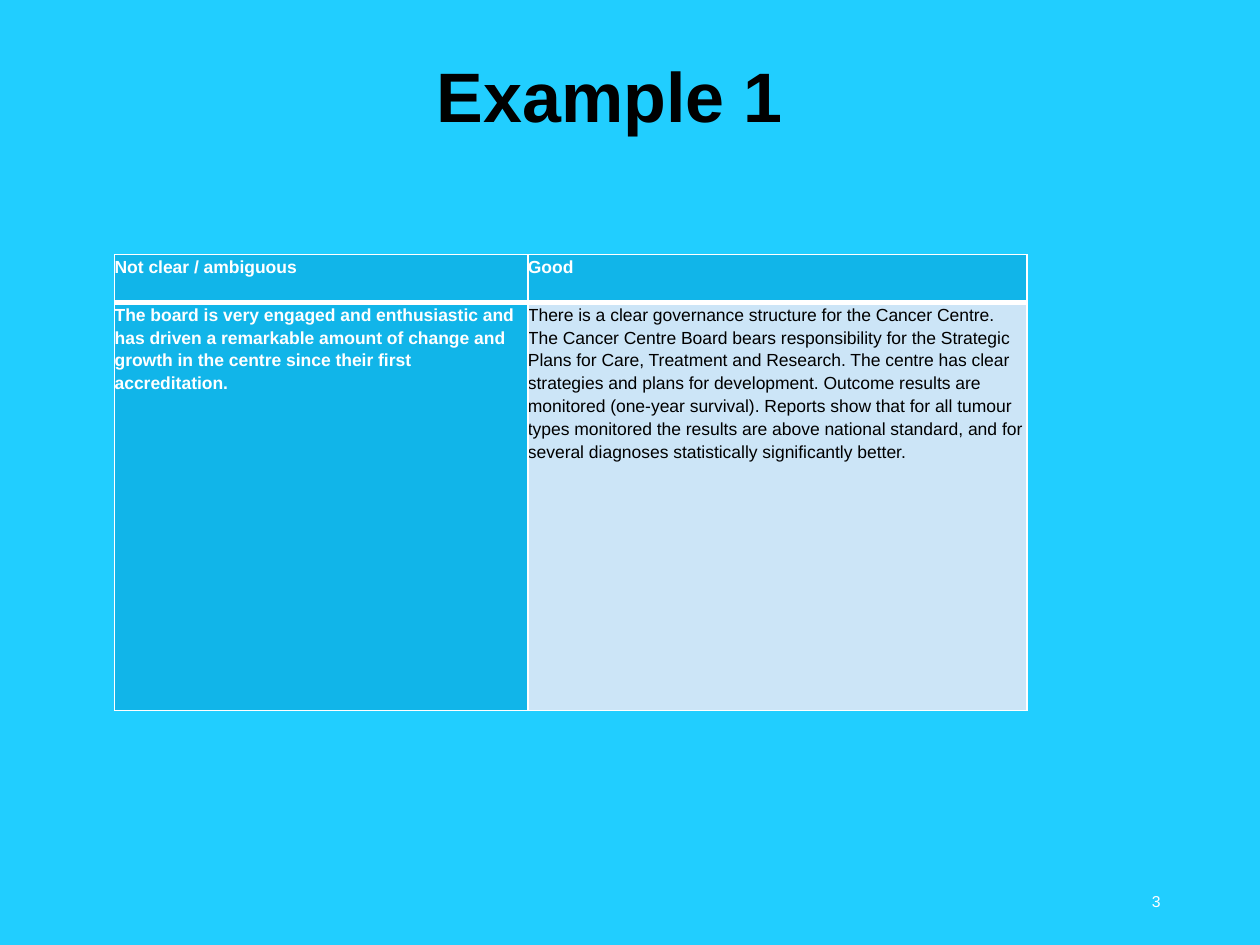
from pptx import Presentation
from pptx.dml.color import RGBColor
from pptx.enum.text import MSO_ANCHOR, PP_ALIGN
from pptx.oxml.ns import qn
from pptx.util import Inches, Pt
from lxml.etree import SubElement

COLORS = {
    "background": "21CEFF",
    "accent": "11B5E9",
    "pale": "CCE5F7",
    "white": "FFFFFF",
    "black": "000000",
}
COLUMN_WIDTHS = (3.28, 3.96)
ROW_HEIGHTS = (0.38, 3.24)
ROWS = (
    ("Not clear / ambiguous", "Good"),
    (
        "The board is very engaged and enthusiastic and has driven a remarkable "
        "amount of change and growth in the centre since their first accreditation.",
        "There is a clear governance structure for the Cancer Centre. The Cancer "
        "Centre Board bears responsibility for the Strategic Plans for Care, "
        "Treatment and Research. The centre has clear strategies and plans for "
        "development. Outcome results are monitored (one-year survival). Reports "
        "show that for all tumour types monitored the results are above national "
        "standard, and for several diagnoses statistically significantly better.",
    ),
)


def rgb(name):
    return RGBColor.from_string(COLORS[name])


def write(tf, text, size, color, bold=False, align=PP_ALIGN.LEFT, spacing=None):
    p = tf.paragraphs[0]
    p.alignment = align
    p.line_spacing = spacing
    r = p.add_run()
    r.text = text
    for name, value in {"name": "Arial", "size": Pt(size), "bold": bold}.items():
        setattr(r.font, name, value)
    r.font.color.rgb = rgb(color)


def place(sp, left, top, width, height):
    box = {"left": left, "top": top, "width": width, "height": height}
    for name, value in box.items():
        setattr(sp, name, Inches(value))


def add_title(s, text):
    sp = s.shapes.title
    place(sp, 0.59, 0.17, 8.5, 1.25)
    tf = sp.text_frame
    tf.vertical_anchor = MSO_ANCHOR.MIDDLE
    write(tf, text, 40, "black", True, PP_ALIGN.CENTER, 0.9)


def add_page_number(s, text):
    sp = s.shapes.add_textbox(Inches(7.06), Inches(6.95), Inches(2.25), Inches(0.4))
    tf = sp.text_frame
    tf.word_wrap = True
    tf.vertical_anchor = MSO_ANCHOR.MIDDLE
    write(tf, text, 9, "white", align=PP_ALIGN.RIGHT)


def set_borders(cell, widths):
    """Draw white borders; widths maps L, R, T, B to points."""
    tc_pr = cell._tc.get_or_add_tcPr()
    for side, width in widths.items():
        ln = SubElement(tc_pr, qn(f"a:ln{side}"), w=str(Pt(width)))
        fill = SubElement(ln, qn("a:solidFill"))
        SubElement(fill, qn("a:srgbClr"), val=COLORS["white"])


def format_cell(cell, text, is_header, is_first):
    emphasized = is_header or is_first
    for side in ("left", "right", "top", "bottom"):
        setattr(cell, f"margin_{side}", 0)
    set_borders(cell, {"L": 1, "R": 1, "T": 1 if is_header else 3,
                       "B": 3 if is_header else 1})
    cell.fill.solid()
    cell.fill.fore_color.rgb = rgb("accent" if emphasized else "pale")
    write(cell.text_frame, text, 10, "white" if emphasized else "black",
          emphasized, spacing=Pt(13))


def add_comparison_table(s):
    table = s.shapes.add_table(
        len(ROWS), len(COLUMN_WIDTHS), Inches(0.91), Inches(2.02),
        Inches(sum(COLUMN_WIDTHS)), Inches(sum(ROW_HEIGHTS))).table
    for column, width in zip(table.columns, COLUMN_WIDTHS):
        column.width = Inches(width)
    for i, (row, height) in enumerate(zip(table.rows, ROW_HEIGHTS)):
        row.height = Inches(height)
        for j, text in enumerate(ROWS[i]):
            format_cell(table.cell(i, j), text, i == 0, j == 0)


def main():
    prs = Presentation()
    prs.slide_width, prs.slide_height = Inches(10), Inches(7.5)
    s = prs.slides.add_slide(prs.slide_layouts[5])
    s.background.fill.solid()
    s.background.fill.fore_color.rgb = rgb("background")
    add_title(s, "Example 1")
    add_page_number(s, "3")
    add_comparison_table(s)
    prs.save("out.pptx")


if __name__ == "__main__":
    main()
